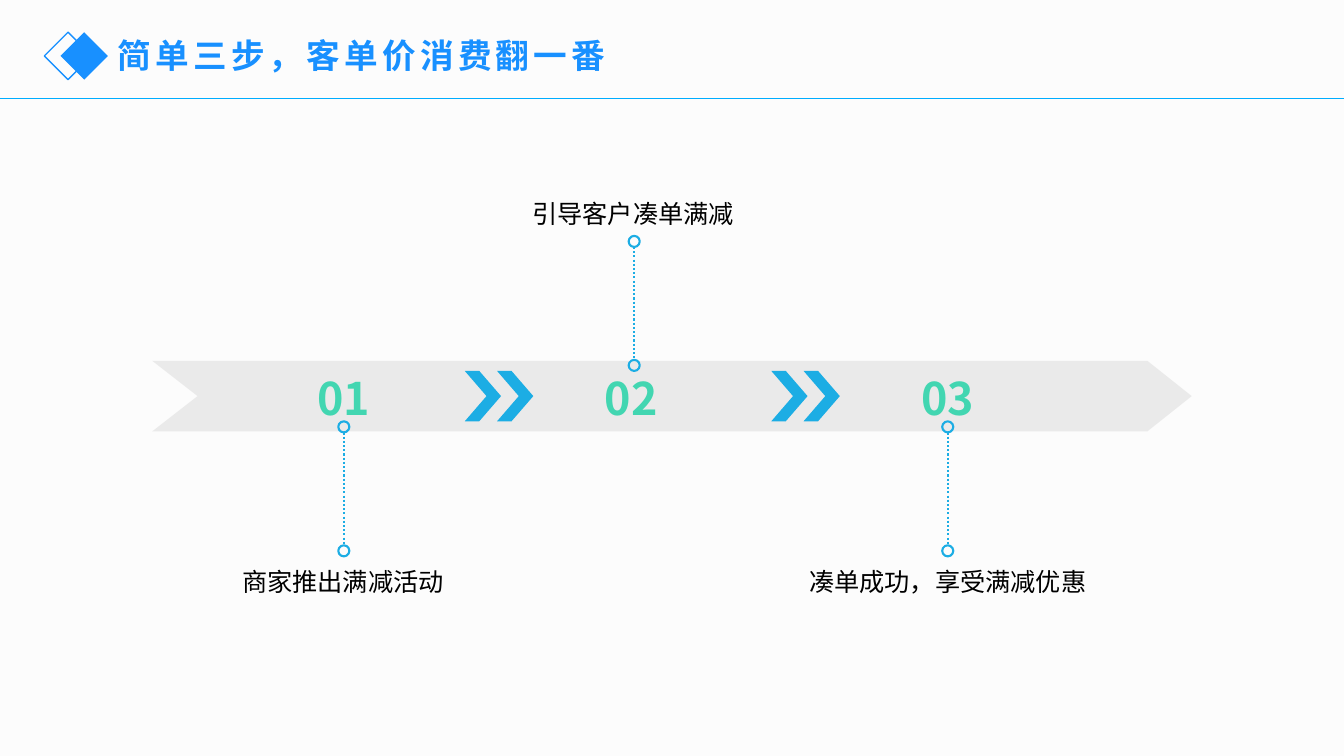
import pptx
import pptx.util
import pptx.dml.color
import pptx.enum.dml
import pptx.enum.shapes
import pptx.enum.text
import pptx.oxml.ns
from lxml import etree

Inches = pptx.util.Inches
Pt = pptx.util.Pt
RGBColor = pptx.dml.color.RGBColor
Shape = pptx.enum.shapes.MSO_SHAPE
Line = pptx.enum.shapes.MSO_CONNECTOR.STRAIGHT
Align = pptx.enum.text.PP_ALIGN
qn = pptx.oxml.ns.qn

PAPER = RGBColor(0xFC, 0xFC, 0xFC)
BLUE = RGBColor(0x18, 0x90, 0xFF)
RULE = RGBColor(0x00, 0xAD, 0xFF)
CYAN = RGBColor(0x1C, 0xAD, 0xE4)
GREEN = RGBColor(0x42, 0xD6, 0xB1)
GREY = RGBColor(0xD9, 0xD9, 0xD9)
BLACK = RGBColor(0, 0, 0)
FACE = "Noto Sans CJK SC"

TITLE = {"size": Pt(24), "bold": True, "name": FACE}
LABEL = {"size": Pt(18), "bold": False, "name": FACE}
NUMBER = {"size": Pt(32), "bold": True, "name": FACE}
INSET = {"margin_left": Inches(0.07), "margin_right": Inches(0.07),
         "margin_top": Inches(0.04), "margin_bottom": Inches(0.04)}

STEPS = [
    ("01", 3.41, "商家推出满减活动", 3.4, 2.32, 5.57, 3.41, 4.18),
    ("02", 6.26, "引导客户凑单满减", 6.28, 2.44, 1.92, 6.29, 2.34),
    ("03", 9.4, "凑单成功，享受满减优惠", 9.4, 3.13, 5.57, 9.4, 4.18),
]


def apply(target, values):
    for name, value in values.items():
        setattr(target, name, value)


def add_text(slide, text, box, style, color, align=Align.CENTER, frame={}, gap=0):
    area = slide.shapes.add_textbox(*map(Inches, box)).text_frame
    area.word_wrap = True
    area.auto_size = pptx.enum.text.MSO_AUTO_SIZE.SHAPE_TO_FIT_TEXT
    apply(area, frame)
    para = area.paragraphs[0]
    para.alignment = align
    run = para.add_run()
    run.text = text
    apply(run.font, style)
    run.font.color.rgb = color
    props = run._r.get_or_add_rPr()
    etree.SubElement(props, qn("a:ea"), typeface=FACE)
    if gap:
        props.set("spc", str(gap * 100))


def paint(shape, fill=None, line=None, width=1):
    shape.shadow.inherit = False
    if fill is None:
        shape.fill.background()
    else:
        shape.fill.solid()
        shape.fill.fore_color.rgb = fill
    if line is None:
        shape.line.fill.background()
    else:
        shape.line.color.rgb = line
        shape.line.width = Pt(width)


def add_shape(slide, kind, box, **look):
    shape = slide.shapes.add_shape(kind, *map(Inches, box))
    paint(shape, **look)
    return shape


def add_line(slide, start, end, color, width):
    line = slide.shapes.add_connector(Line, *map(Inches, start + end))
    line.line.color.rgb = color
    line.line.width = Pt(width)
    etree.SubElement(line._element.spPr, qn("a:effectLst"))
    return line


def add_band(slide):
    points = [(1.51, 3.58), (11.38, 3.58), (11.82, 3.93),
              (11.38, 4.28), (1.51, 4.28), (1.96, 3.93)]
    first, *rest = [(Inches(x), Inches(y)) for x, y in points]
    pen = slide.shapes.build_freeform(*first)
    pen.add_line_segments(rest, close=True)
    band = pen.convert_to_shape()
    paint(band, fill=GREY)
    shade = band._element.spPr.find(qn("a:solidFill"))[0]
    etree.SubElement(shade, qn("a:alpha"), val="50000")


def add_stem(slide, mid, top):
    size, drop = 0.11, 1.23
    dots = [add_shape(slide, Shape.OVAL, (mid - size / 2, y, size, size),
                      line=CYAN, width=1.5) for y in (top, top + drop)]
    stem = add_line(slide, (mid, top + size), (mid, top + drop), CYAN, 1.5)
    stem.line.dash_style = pptx.enum.dml.MSO_LINE.ROUND_DOT
    stem.end_connect(dots[1], 0)


def add_arrows(slide, left):
    for x in (left + 0.32, left):
        arrow = add_shape(slide, Shape.CHEVRON, (x, 3.68, 0.36, 0.5), fill=CYAN)
        arrow.adjustments[0] = 0.6


def add_header(slide):
    add_line(slide, (0, 0.98), (13.33, 0.98), RULE, 1)
    add_shape(slide, Shape.DIAMOND, (0.44, 0.32, 0.47, 0.47), line=BLUE)
    add_shape(slide, Shape.DIAMOND, (0.6, 0.32, 0.47, 0.47), fill=BLUE)
    add_text(slide, "简单三步，客单价消费翻一番", (1.07, 0.3, 5.49, 0.5),
             TITLE, BLUE, Align.LEFT, gap=3)


def main():
    deck = pptx.Presentation()
    apply(deck, {"slide_width": Inches(13.33), "slide_height": Inches(7.5)})
    slide = deck.slides.add_slide(deck.slide_layouts[6])
    slide.background.fill.solid()
    slide.background.fill.fore_color.rgb = PAPER
    add_header(slide)
    add_band(slide)
    for num, spot, label, mid, width, top, stem, dot in STEPS:
        add_text(slide, label, (mid - width / 2, top, width, 0.4), LABEL, BLACK)
        add_text(slide, num, (spot - 0.41, 3.64, 0.82, 0.61), NUMBER, GREEN,
                 frame=INSET)
        add_stem(slide, stem, dot)
    for left in (4.61, 7.65):
        add_arrows(slide, left)
    deck.save("out.pptx")


if __name__ == "__main__":
    main()
